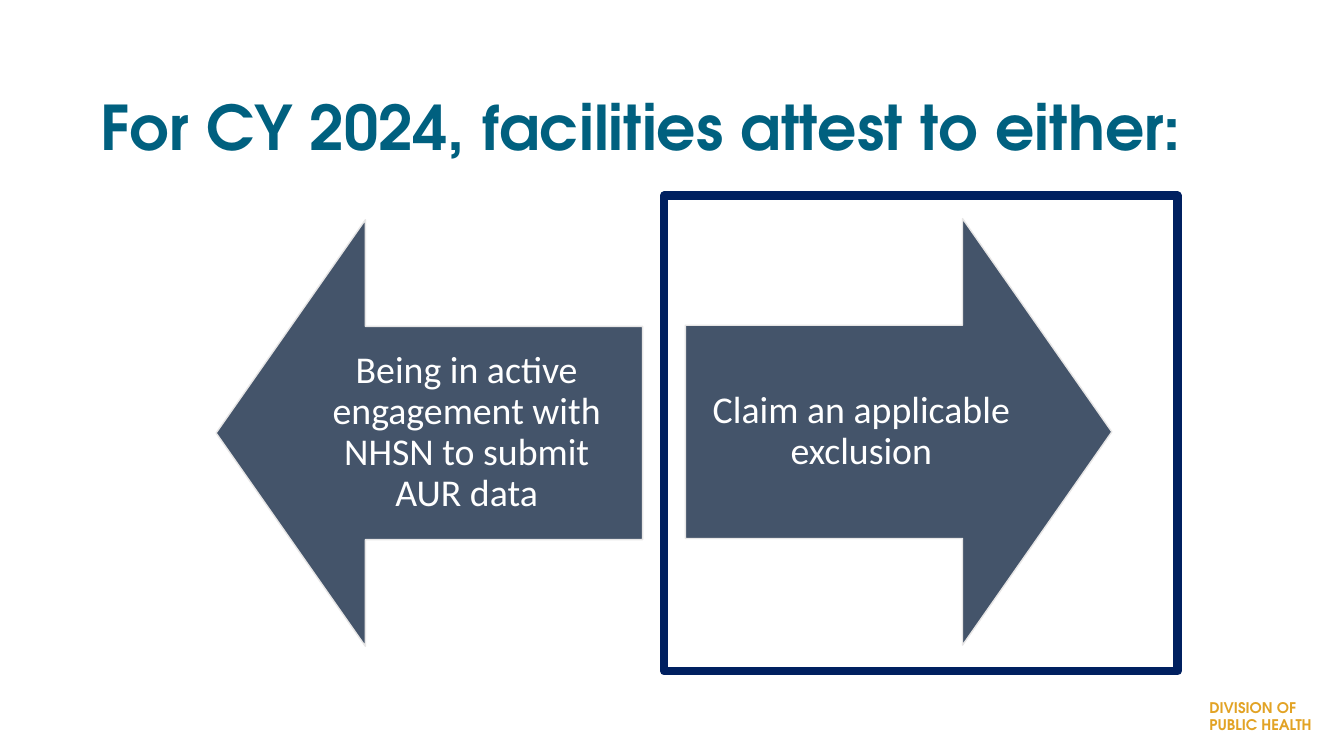
from dataclasses import dataclass

from pptx import Presentation
from pptx.dml.color import RGBColor
from pptx.enum.shapes import MSO_SHAPE
from pptx.enum.text import MSO_ANCHOR, MSO_AUTO_SIZE, PP_ALIGN
from pptx.util import Pt


@dataclass(frozen=True)
class Theme:
    heading_font: str = "TeX Gyre Adventor"
    body_font: str = "Calibri"
    teal: str = "00607F"
    gold: str = "E2A325"
    slate: str = "44546A"
    pale: str = "E7E6E6"
    navy: str = "002060"
    white: str = "FFFFFF"
    title_size: float = 44
    arrow_size: float = 27
    division_size: float = 10.5


THEME = Theme()
ARROW_SIDE = 304.6


def color(value):
    return RGBColor.from_string(value)


def set_font(paragraph, name, size, value, bold=False):
    font = paragraph.font
    font.name = name
    font.size = Pt(size)
    font.bold = bold
    font.color.rgb = color(value)


def set_margins(frame, margin):
    frame.margin_left = frame.margin_right = Pt(margin)
    frame.margin_top = frame.margin_bottom = Pt(margin)


def set_title(slide, text):
    title = slide.shapes.title
    title.left, title.top, title.width, title.height = Pt(72), Pt(73.4), Pt(816), Pt(45.4)
    frame = title.text_frame
    frame.text = text
    frame.word_wrap = True
    frame.auto_size = MSO_AUTO_SIZE.NONE
    frame.vertical_anchor = MSO_ANCHOR.TOP
    set_margins(frame, 0)
    paragraph = frame.paragraphs[0]
    paragraph.alignment = PP_ALIGN.LEFT
    paragraph.line_spacing = 0.8
    set_font(paragraph, THEME.heading_font, THEME.title_size, THEME.teal, bold=True)


def add_outlined_shape(slide, kind, left, top, width, height, line_color, line_width):
    shape = slide.shapes.add_shape(kind, Pt(left), Pt(top), Pt(width), Pt(height))
    shape.shadow.inherit = False
    shape.fill.background()
    shape.line.color.rgb = color(line_color)
    shape.line.width = Pt(line_width)
    return shape


def add_choice_arrow(slide, kind, left, top, text):
    arrow = add_outlined_shape(slide, kind, left, top, ARROW_SIDE, ARROW_SIDE, THEME.pale, 1)
    arrow.adjustments[0] = 0.5
    arrow.adjustments[1] = 0.35
    arrow.fill.solid()
    arrow.fill.fore_color.rgb = color(THEME.slate)
    frame = arrow.text_frame
    frame.text = text
    frame.word_wrap = True
    frame.vertical_anchor = MSO_ANCHOR.MIDDLE
    set_margins(frame, 15)
    paragraph = frame.paragraphs[0]
    paragraph.alignment = PP_ALIGN.CENTER
    paragraph.line_spacing = 0.9
    set_font(paragraph, THEME.body_font, THEME.arrow_size, THEME.white)


def add_division_label(slide, text):
    box = slide.shapes.add_textbox(Pt(856.8), Pt(495.4), Pt(103.2), Pt(32.4))
    frame = box.text_frame
    frame.word_wrap = True
    frame.text = text
    for paragraph in frame.paragraphs:
        set_font(paragraph, THEME.heading_font, THEME.division_size, THEME.gold, bold=True)


def main():
    deck = Presentation()
    deck.slide_width, deck.slide_height = Pt(960), Pt(540)
    slide = deck.slides.add_slide(deck.slide_layouts[5])
    add_division_label(slide, "DIVISION OF\nPUBLIC HEALTH")
    set_title(slide, "For CY 2024, facilities attest to either:")
    add_choice_arrow(slide, MSO_SHAPE.LEFT_ARROW, 154.4, 157,
                     "Being in active engagement with NHSN to submit AUR data")
    add_choice_arrow(slide, MSO_SHAPE.RIGHT_ARROW, 489.6, 156.2, "Claim an applicable exclusion")
    add_outlined_shape(slide, MSO_SHAPE.RECTANGLE, 474.5, 139.7, 366.5, 339.8, THEME.navy, 6)
    deck.save("out.pptx")


if __name__ == "__main__":
    main()
